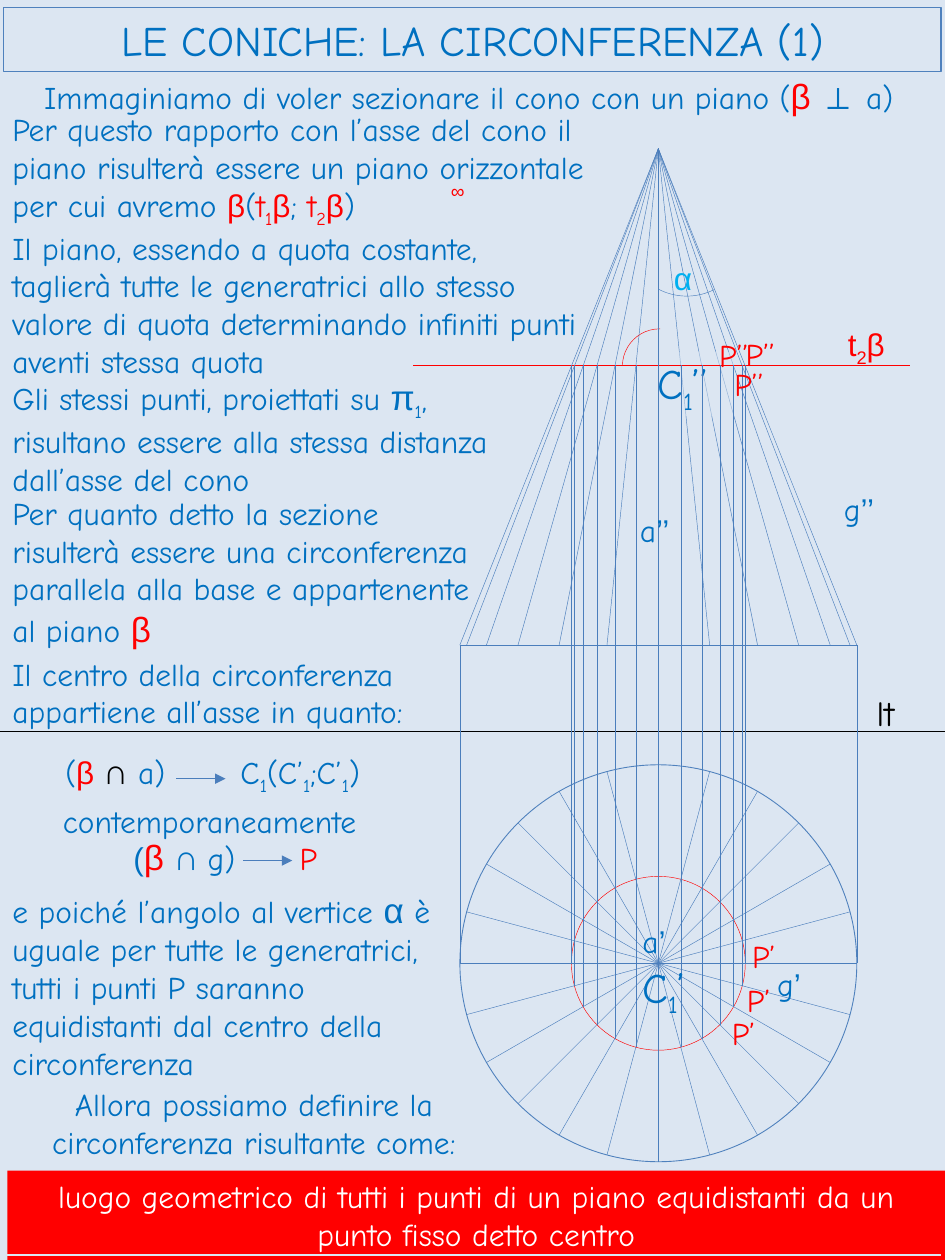
from math import cos, radians, sin

from lxml import etree
from pptx import Presentation
from pptx.dml.color import RGBColor
from pptx.enum.shapes import MSO_CONNECTOR, MSO_SHAPE
from pptx.enum.text import MSO_ANCHOR, MSO_AUTO_SIZE, PP_ALIGN
from pptx.oxml.ns import qn
from pptx.util import Inches, Pt

RECT, OVAL, ARC = MSO_SHAPE.RECTANGLE, MSO_SHAPE.OVAL, MSO_SHAPE.ARC
LEFT, MID = PP_ALIGN.LEFT, PP_ALIGN.CENTER
TOP, CENTER = MSO_ANCHOR.TOP, MSO_ANCHOR.MIDDLE
GROW = MSO_AUTO_SIZE.SHAPE_TO_FIT_TEXT
hue = RGBColor.from_string
BLUE, RED, BLACK, SKY = "0070C0", "FF0000", "000000", "00B0F0"
PALE, EDGE, THIN = "DCE6F2", "4F81BD", "4B7EBC"

deck = Presentation()
deck.slide_width, deck.slide_height = Inches(7.5), Inches(10)
slide = deck.slides.add_slide(deck.slide_layouts[6])
slide.background.fill.solid()
slide.background.fill.fore_color.rgb = hue(PALE)
shapes = slide.shapes


def line(x1, y1, x2, y2, color=THIN, width=0.25, arrow=False):
    link = shapes.add_connector(MSO_CONNECTOR.STRAIGHT, Inches(x1), Inches(y1),
                                Inches(x2), Inches(y2))
    link.line.color.rgb = hue(color)
    link.line.width = Pt(width)
    props = link._element.spPr
    if arrow:
        etree.SubElement(props.find(qn("a:ln")), qn("a:tailEnd"), type="triangle")
    etree.SubElement(props, qn("a:effectLst"))


def note(text, x, y, w, h, size=18, color=BLUE, font="Comic Neue", align=LEFT,
         anchor=TOP, fill=None, alpha=None, edge=None, tab=None, wrap=True):
    """Text is a string or a list of strings and (string, flags) pairs.

    Flags: A Arial, b 20 points, r red, k black, s subscript.
    """
    area = [Inches(n) for n in (x, y, w, h)]
    if fill or edge:
        box = shapes.add_shape(RECT, *area)
        box.shadow.inherit = False
    else:
        box = shapes.add_textbox(*area)
    if fill:
        box.fill.solid()
        box.fill.fore_color.rgb = hue(fill)
        if alpha:
            tint = box._element.spPr.find(".//" + qn("a:srgbClr"))
            etree.SubElement(tint, qn("a:alpha"), val=str(alpha * 1000))
    else:
        box.fill.background()
    if edge:
        box.line.color.rgb = hue(edge)
        box.line.width = Pt(0.75)
    else:
        box.line.fill.background()
    frame = box.text_frame
    frame.word_wrap = wrap
    frame.vertical_anchor = anchor
    if not edge:
        frame.auto_size = GROW
    para = frame.paragraphs[0]
    para.alignment = align
    if tab:
        stops = etree.SubElement(para._p.get_or_add_pPr(), qn("a:tabLst"))
        etree.SubElement(stops, qn("a:tab"), pos=str(Inches(tab)), algn="l")
    for part in [text] if isinstance(text, str) else text:
        words, flags = (part, "") if isinstance(part, str) else part
        run = para.add_run()
        run.text = words
        run.font.name = "Arial" if "A" in flags else font
        run.font.size = Pt(20 if "b" in flags else size)
        run.font.color.rgb = hue(RED if "r" in flags else BLACK if "k" in flags else color)
        if "s" in flags:
            run._r.get_or_add_rPr().set("baseline", "-25000")


# Cone in both views
mid, apex, base, hub = 5.225, 1.18, 5.12, 7.645
rad, ring, cut = 1.575, 0.69, 2.9
line(0, 5.8, 7.5, 5.8, BLACK)
for kind, x, y, w, h, color, width, turn, bend in [
    (OVAL, mid - rad, hub - rad, 2 * rad, 2 * rad, EDGE, 0.5, 0, ()),
    (OVAL, mid - ring, hub - ring, 2 * ring, 2 * ring, RED, 0.25, 0, ()),
    (ARC, 5.01, 1.56, 0.88, 0.79, THIN, 0.25, 180, (142.53, 182)),
    (ARC, 4.94, 2.61, 0.59, 0.59, RED, 0.25, 0, (108.93, 162.37)),
]:
    curve = shapes.add_shape(kind, Inches(x), Inches(y), Inches(w), Inches(h))
    curve.shadow.inherit = False
    curve.fill.background()
    curve.line.color.rgb = hue(color)
    curve.line.width = Pt(width)
    curve.rotation = turn
    for i, value in enumerate(bend):
        curve.adjustments[i] = value

for x in (mid - rad, mid, mid + rad):
    line(x, base, x, hub)
line(mid - rad, base, mid + rad, base, width=0.5)
for deg in range(0, 360, 15):
    line(mid, hub, mid + rad * cos(radians(deg)), hub + rad * sin(radians(deg)))
for deg in range(0, 181, 15):
    line(mid, apex, mid + rad * cos(radians(deg)), base)

note(["C", ("1", "s"), "’’"], 5.12, 2.79, 0.71, 0.51, size=24, fill=PALE, alpha=50)
line(mid, apex, mid, base, width=0.5)
line(3.28, cut, 7.22, cut, RED)
for deg in range(0, 181, 15):
    x = mid + ring * cos(radians(deg))
    line(x, cut, x, hub + ring * sin(radians(deg)))

# Labels of the drawing
note(["C", ("1", "s"), "’"], 5, 7.58, 0.59, 0.55, size=24)
for name, mark, x, y in [("g", "’’", 6.6, 3.84), ("g", "’", 6.07, 7.61),
                         ("a", "’’", 4.98, 4.01), ("a", "’", 5, 7.27)]:
    note([name, (mark, "A")], x, y, 0.47, 0.4)
note("lt", 6.86, 5.44, 0.47, 0.44, size=20, color=BLACK)
note("α", 5.25, 2.01, 0.35, 0.4, color=SKY, font="Arial", anchor=CENTER)
note(["t", ("2", "s"), "β"], 6.63, 2.53, 0.55, 0.4, color=RED, font="Arial")
for name, x, y in [("P’", 5.87, 7.39), ("P’", 5.83, 7.74), ("P’", 5.71, 8),
                   ("P’’", 5.82, 2.61), ("P’’", 5.73, 2.85), ("P’’", 5.61, 2.62)]:
    note(name, x, y, 0.45, 0.35, color=RED)

# Title and explanation
note("LE CONICHE: LA CIRCONFERENZA (1)", 0.03, 0.06, 7.44, 0.51, size=24,
     align=MID, anchor=CENTER, edge=EDGE)
note(["Immaginiamo di voler sezionare il cono con un piano (", ("β", "Abr"),
      (" ⊥", "Ab"), " a)"], 0, 0.54, 7.44, 0.44, align=MID)
note(["Per questo rapporto con l’asse del cono il piano risulterà essere un piano "
      "orizzontale per cui avremo ", ("β", "Ar"), "(", ("t", "r"), ("1", "rs"),
      ("β", "Ar"), "; ", ("t", "r"), ("2", "rs"), ("β", "Ar"), ")"],
     0, 0.84, 4.86, 1.01, anchor=CENTER)
note("∞", 3.48, 1.37, 0.31, 0.29, size=11, color=RED, font="Arial",
     anchor=CENTER, wrap=False)
note("Il piano, essendo a quota costante, taglierà tutte le generatrici allo stesso "
     "valore di quota determinando infiniti punti aventi stessa quota",
     0, 1.76, 4.72, 1.31, anchor=CENTER)
note(["Gli stessi punti, proiettati su ", ("π", "Ab"), ("1", "s"),
      ", risultano essere alla stessa distanza dall’asse del cono"],
     0, 2.93, 4.37, 1.04)
note(["Per quanto detto la sezione risulterà essere una circonferenza parallela "
      "alla base e appartenente al piano ", ("β", "Abr")], 0, 3.87, 3.94, 1.35)
note("Il centro della circonferenza appartiene all’asse in quanto:",
     0, 5.14, 3.78, 0.71, anchor=CENTER)
note(["(", ("β ", "Ar"), ("∩ ", "Abk"), "a)\tC", ("1", "s"), "(C’", ("1", "s"),
      ";C’", ("1", "s"), ")"], 0.42, 5.9, 2.78, 0.44, tab=1.39)
line(1.4, 6.18, 1.79, 6.18, width=0.75, arrow=True)
note("contemporaneamente", 0.4, 6.32, 2.94, 0.4)
note([("(", "A"), ("β ", "Abr"), ("∩", "Ab"), (" ", "A"), "g)\t", ("P", "r")],
     0.96, 6.58, 1.76, 0.44, tab=1.32)
line(1.93, 6.83, 2.32, 6.83, width=0.75, arrow=True)
note(["e poiché l’angolo al vertice ", ("α", "Ab"), " è uguale per tutte le "
      "generatrici, tutti i punti P saranno equidistanti dal centro della "
      "circonferenza"], 0, 7, 3.7, 1.65)
note("Allora possiamo definire la circonferenza risultante come:",
     0, 8.56, 4.03, 0.71, align=MID)
note("luogo geometrico di tutti i punti di un piano equidistanti da un punto fisso "
     "detto centro", 0.06, 9.29, 7.44, 0.71, color="FFFFFF", align=MID, fill=RED)
line(0.03, 9.96, 7.47, 9.96, PALE, 0.75)

deck.save("out.pptx")
